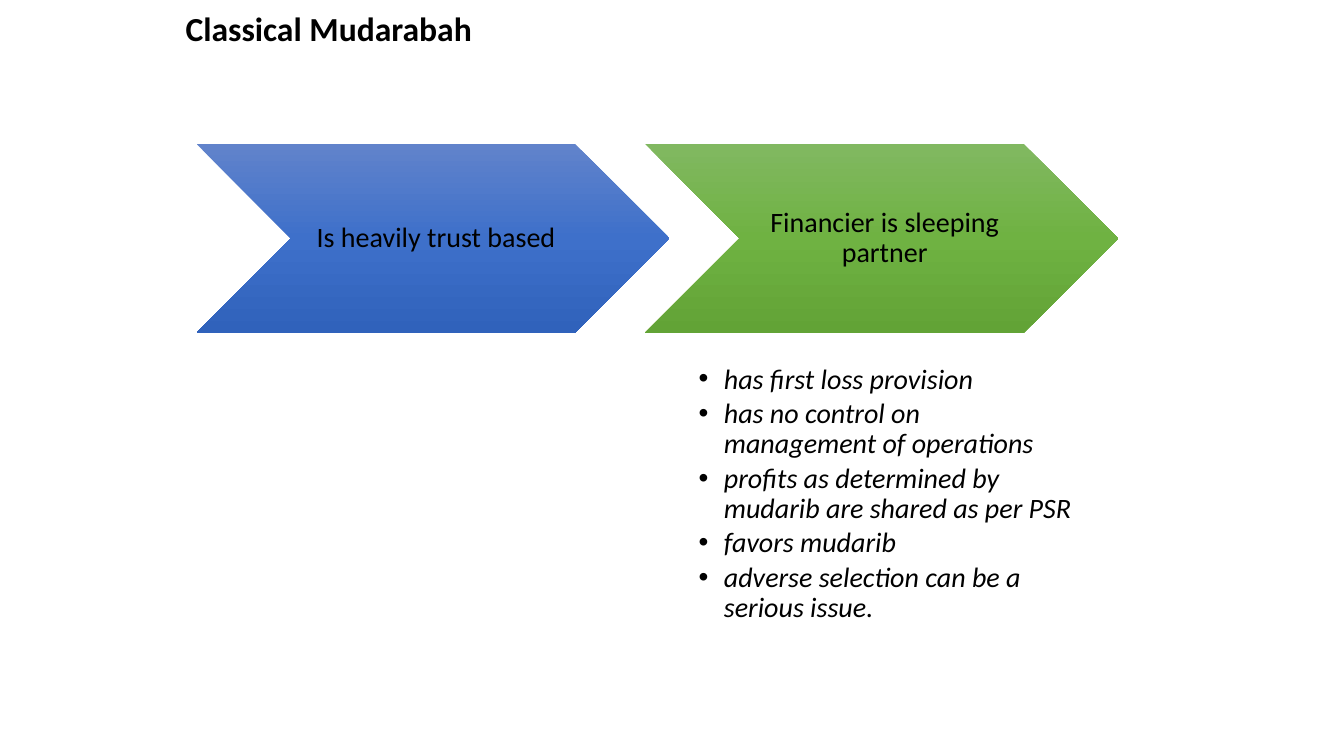
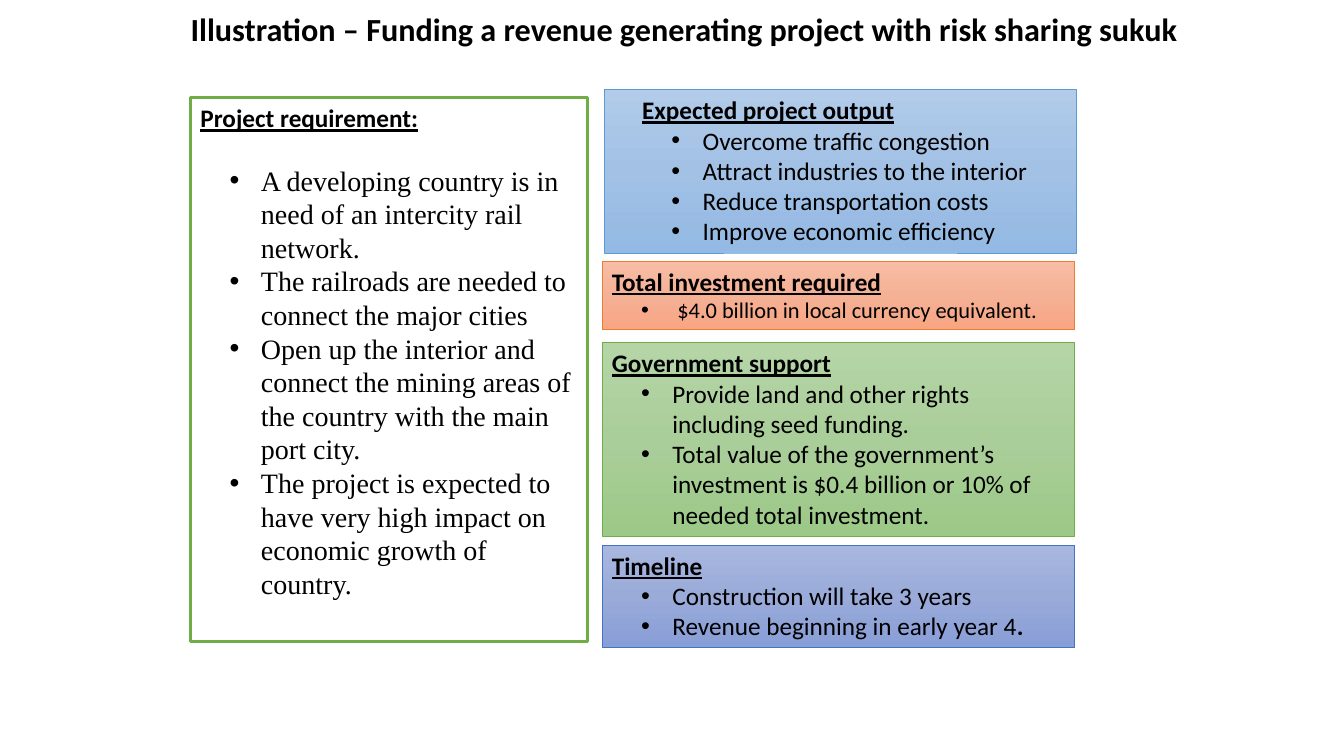
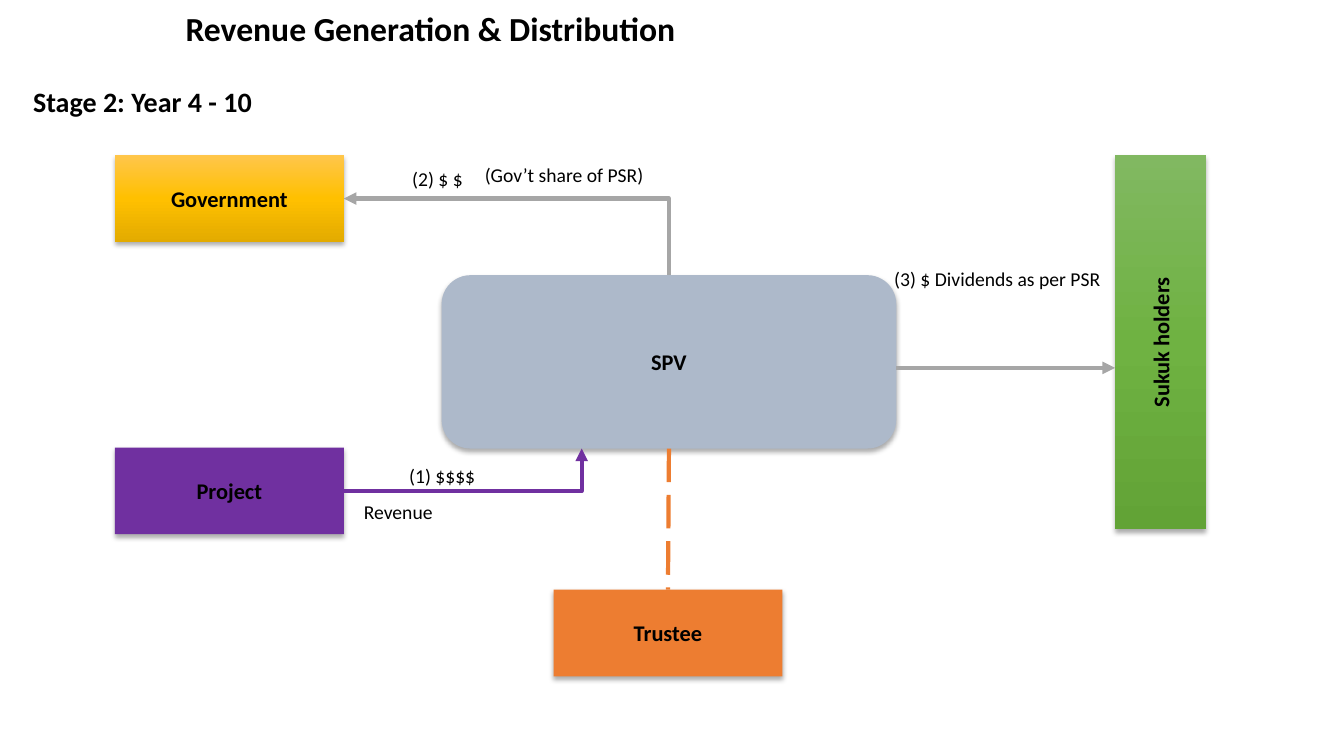
from lxml import etree
from pptx import Presentation
from pptx.dml.color import RGBColor
from pptx.enum.dml import MSO_LINE
from pptx.enum.shapes import MSO_CONNECTOR, MSO_SHAPE
from pptx.enum.text import MSO_ANCHOR, MSO_AUTO_SIZE, PP_ALIGN
from pptx.oxml.ns import qn
from pptx.util import Emu, Pt

# Enum members
RECT, ROUND, CHEVRON = MSO_SHAPE.RECTANGLE, MSO_SHAPE.ROUNDED_RECTANGLE, MSO_SHAPE.CHEVRON
STRAIGHT, ELBOW = MSO_CONNECTOR.STRAIGHT, MSO_CONNECTOR.ELBOW
TOP, MIDDLE = MSO_ANCHOR.TOP, MSO_ANCHOR.MIDDLE
LEFT, CENTER = PP_ALIGN.LEFT, PP_ALIGN.CENTER
LONG_DASH = MSO_LINE.LONG_DASH
SIDE_TOP, SIDE_BOTTOM, SIDE_RIGHT = 0, 2, 3

# Style: 100 px to the inch
EMU_PER_PX = 9144
FONT, SERIF = "Calibri", "Times New Roman"
TITLE_ONLY = 5
INSETS = (10, 5, 10, 5)

BLACK = RGBColor(0x00, 0x00, 0x00)
WHITE = RGBColor(0xFF, 0xFF, 0xFF)
BLUE = RGBColor(0x44, 0x72, 0xC4)
SKY = RGBColor(0x5B, 0x9B, 0xD5)
GREEN = RGBColor(0x70, 0xAD, 0x47)
ORANGE = RGBColor(0xED, 0x7D, 0x31)
PURPLE = RGBColor(0x70, 0x30, 0xA0)
SLATE = RGBColor(0xAD, 0xB9, 0xCA)
GRAY = RGBColor(0xA6, 0xA6, 0xA6)

# Vertical gradients: top, middle, bottom
BLUE_GRAD = (RGBColor(0x61, 0x83, 0xCB), RGBColor(0x3E, 0x70, 0xCA), RGBColor(0x30, 0x62, 0xBB))
GREEN_GRAD = (RGBColor(0x81, 0xB8, 0x61), RGBColor(0x6F, 0xB2, 0x42), RGBColor(0x62, 0xA3, 0x36))
GOLD_GRAD = (RGBColor(0xFF, 0xC6, 0x4B), RGBColor(0xFF, 0xC0, 0x00), RGBColor(0xE3, 0xAB, 0x00))
PALE_SKY = (RGBColor(0xB1, 0xCB, 0xE9), RGBColor(0xA3, 0xC1, 0xE5), RGBColor(0x93, 0xB9, 0xE4))
PALE_ORANGE = (RGBColor(0xF7, 0xBD, 0xA5), RGBColor(0xF5, 0xB1, 0x96), RGBColor(0xF8, 0xA5, 0x82))
PALE_GREEN = (RGBColor(0xB5, 0xD5, 0xA7), RGBColor(0xAA, 0xCE, 0x9A), RGBColor(0x9C, 0xC9, 0x87))
PALE_BLUE = (RGBColor(0xA8, 0xB7, 0xDF), RGBColor(0x9A, 0xAB, 0xD9), RGBColor(0x88, 0x9E, 0xD7))


def px(n):
    return Emu(n * EMU_PER_PX)


def write(tf, text, size=18, bold=False, italic=False, underline=False, font=FONT,
          align=LEFT, spacing=None, after=0, indent=0, hang=0, same_line=False):
    """Add a paragraph, or a run on the last one; a hang gives it a bullet."""
    p = tf.paragraphs[-1]
    if not same_line:
        if p.runs:
            p = tf.add_paragraph()
        p.alignment, p.line_spacing = align, spacing
        p.space_before, p.space_after = Pt(0), Pt(after)
        pPr = p._p.get_or_add_pPr()
        pPr.set("marL", str(px(indent)))
        pPr.set("indent", str(px(-hang)))
        if hang:
            etree.SubElement(pPr, qn("a:buFont"), typeface="Arial")
            etree.SubElement(pPr, qn("a:buChar"), char="•")
    r = p.add_run()
    r.text = text
    r.font.name, r.font.size, r.font.color.rgb = font, Pt(size), BLACK
    r.font.bold, r.font.italic, r.font.underline = bold, italic, underline


class Deck:
    def __init__(self, prs):
        self.prs = prs
        self.s = None

    def frame(self, sp, anchor=TOP, insets=INSETS):
        tf = sp.text_frame
        tf.word_wrap, tf.auto_size, tf.vertical_anchor = True, MSO_AUTO_SIZE.NONE, anchor
        tf.margin_left, tf.margin_top, tf.margin_right, tf.margin_bottom = map(px, insets)
        return tf

    def slide(self, title, x=184, y=12, w=994, size=24):
        self.s = self.prs.slides.add_slide(self.prs.slide_layouts[TITLE_ONLY])
        sp = self.s.shapes.title
        sp.left, sp.top, sp.width, sp.height = map(px, (x, y, w, 48))
        write(self.frame(sp, insets=(0, 0, 0, 0)), title, size=size, bold=True, spacing=0.9)

    def text_box(self, x, y, w, h, insets=INSETS):
        return self.frame(self.s.shapes.add_textbox(*map(px, (x, y, w, h))), insets=insets)

    def label(self, text, x, y, w, h=34, size=14, bold=False):
        write(self.text_box(x, y, w, h), text, size=size, bold=bold)

    def shape(self, kind, x, y, w, h, fill, line=None, weight=0.5):
        """Fill with one colour, or with a gradient of several from top to bottom."""
        sp = self.s.shapes.add_shape(kind, *map(px, (x, y, w, h)))
        sp.shadow.inherit = False
        if isinstance(fill, RGBColor):
            sp.fill.solid()
            sp.fill.fore_color.rgb = fill
        else:
            sp.fill.gradient()
            sp.fill.gradient_angle = 270
            stops = sp._element.spPr.find(qn("a:gradFill")).find(qn("a:gsLst"))
            stops.clear()
            for i, color in enumerate(fill):
                gs = etree.SubElement(stops, qn("a:gs"), pos=str(i * 50000))
                etree.SubElement(gs, qn("a:srgbClr"), val=str(color))
        if line is None:
            sp.line.fill.background()
        else:
            sp.line.color.rgb, sp.line.width = line, Pt(weight)
        return sp

    def chevron(self, text, x, fill):
        sp = self.shape(CHEVRON, x, 143, 469, 187, fill)
        write(self.frame(sp, MIDDLE, (9, 3, 3, 3)), text, size=20, align=CENTER, spacing=0.9)

    def panel(self, heading, items, x, y, w, h, fill, line, weight=0.5,
              size=18, font=FONT, gap=0, shift=0, indent=60, hang=31):
        tf = self.frame(self.shape(RECT, x, y, w, h, fill, line, weight))
        write(tf, heading, bold=True, underline=True, after=gap, indent=shift)
        for item in items:
            write(tf, item, size=size, font=font, indent=indent + shift, hang=hang)
        return tf

    def node(self, text, x, y, fill, w=227, h=86, kind=RECT, vert=None):
        sp = self.shape(kind, x, y, w, h, fill)
        effects = sp._element.spPr.find(qn("a:effectLst"))
        shadow = etree.SubElement(effects, qn("a:outerShdw"), blurRad=str(Pt(3.5)),
                                  dist=str(Pt(2.2)), dir="5400000", rotWithShape="0")
        color = etree.SubElement(shadow, qn("a:srgbClr"), val=str(BLACK))
        etree.SubElement(color, qn("a:alpha"), val="32000")
        tf = self.frame(sp, MIDDLE)
        if vert:
            tf._txBody.bodyPr.set("vert", vert)
        write(tf, text, size=16, bold=True, align=CENTER)
        return sp

    def link(self, points, color, kind=STRAIGHT, begin=None, end=None,
             head=False, tail=False, dash=None):
        """Draw a line; begin and end are (shape, side) pairs to join."""
        c = self.s.shapes.add_connector(kind, *map(px, points))
        if begin:
            c.begin_connect(*begin)
        if end:
            c.end_connect(*end)
        c.line.color.rgb, c.line.width = color, Pt(3)
        if dash:
            c.line.dash_style = dash
        spPr = c._element.spPr
        if kind == ELBOW:
            spPr.find(qn("a:prstGeom")).set("prst", "bentConnector2")
        for tag, wanted in (("a:headEnd", head), ("a:tailEnd", tail)):
            if wanted:
                etree.SubElement(spPr.find(qn("a:ln")), qn(tag), type="triangle")
        etree.SubElement(spPr, qn("a:effectLst"))


def classical_mudarabah(deck):
    deck.slide("Classical Mudarabah")
    deck.chevron("Is heavily trust based", 195, BLUE_GRAD)
    deck.chevron("Financier is sleeping partner", 640, GREEN_GRAD)
    tf = deck.text_box(693, 362, 375, 263, insets=(0, 0, 0, 0))
    for text in ("has first loss provision",
                 "has no control on management of operations",
                 "profits as determined by mudarib are shared as per PSR",
                 "favors mudarib",
                 "adverse selection can be a serious issue."):
        write(tf, text, size=20, italic=True, spacing=0.9, after=3, indent=25, hang=25)


def project_illustration(deck):
    deck.slide("Illustration – Funding a revenue generating project with risk sharing sukuk",
               x=189, y=14, w=1064, size=23)
    deck.panel("Project requirement:",
               ["A developing country is in need of an intercity rail network.",
                "The railroads are needed to connect the major cities",
                "Open up the interior and connect the mining areas of the country "
                "with the main port city.",
                "The project is expected to have very high impact on economic growth "
                "of country."],
               189, 97, 394, 539, WHITE, GREEN, weight=2.25, size=20, font=SERIF, gap=21.5)
    # Right-hand column
    deck.panel("Total investment required", ["$4.0 billion in local currency equivalent."],
               597, 259, 469, 68, PALE_ORANGE, ORANGE, size=16, indent=65, hang=36)
    deck.panel("Government support",
               ["Provide land and other rights including seed funding.",
                "Total value of the government’s investment is $0.4 billion or 10% of "
                "needed total investment."],
               597, 340, 469, 192, PALE_GREEN, GREEN)
    tf = deck.panel("Timeline",
                    ["Construction will take 3 years", "Revenue beginning in early year 4"],
                    597, 541, 469, 101, PALE_BLUE, BLUE)
    write(tf, ".", bold=True, same_line=True)
    deck.panel("Expected project output",
               ["Overcome traffic congestion", "Attract industries to the interior",
                "Reduce transportation costs", "Improve economic efficiency"],
               599, 89, 469, 162, PALE_SKY, SKY, shift=28)


def revenue_distribution(deck):
    deck.slide("Revenue Generation & Distribution")
    deck.label("Stage 2: Year 4 - 10", 23, 79, w=453, h=44, size=20, bold=True)
    # Parties
    deck.node("Sukuk holders", 1106, 154, GREEN_GRAD, w=90, h=371, vert="vert270")
    government = deck.node("Government", 114, 154, GOLD_GRAD)
    spv = deck.node("SPV", 438, 273, SLATE, w=451, h=172, kind=ROUND)
    trustee = deck.node("Trustee", 549, 585, ORANGE)
    project = deck.node("Project", 114, 444, PURPLE)
    # Flows
    deck.link((341, 197, 664, 273), GRAY, ELBOW, begin=(government, SIDE_RIGHT),
              end=(spv, SIDE_TOP), head=True)
    deck.link((889, 365, 1106, 365), GRAY, tail=True)
    deck.link((664, 445, 663, 585), ORANGE, begin=(spv, SIDE_BOTTOM),
              end=(trustee, SIDE_TOP), dash=LONG_DASH)
    deck.link((341, 487, 577, 445), PURPLE, ELBOW, begin=(project, SIDE_RIGHT), tail=True)
    # Flow labels
    deck.label("(1) $$$$", 396, 455, w=100)
    deck.label("Revenue", 351, 491, w=165)
    deck.label("(2) $ $", 399, 161, w=75)
    deck.label("(Gov’t share of PSR)", 471, 157, w=190)
    deck.label("(3) $ Dividends as per PSR", 877, 260, w=229)


def main():
    prs = Presentation()
    prs.slide_width, prs.slide_height = px(1333), px(750)
    deck = Deck(prs)
    classical_mudarabah(deck)
    project_illustration(deck)
    revenue_distribution(deck)
    prs.save("out.pptx")


if __name__ == "__main__":
    main()
